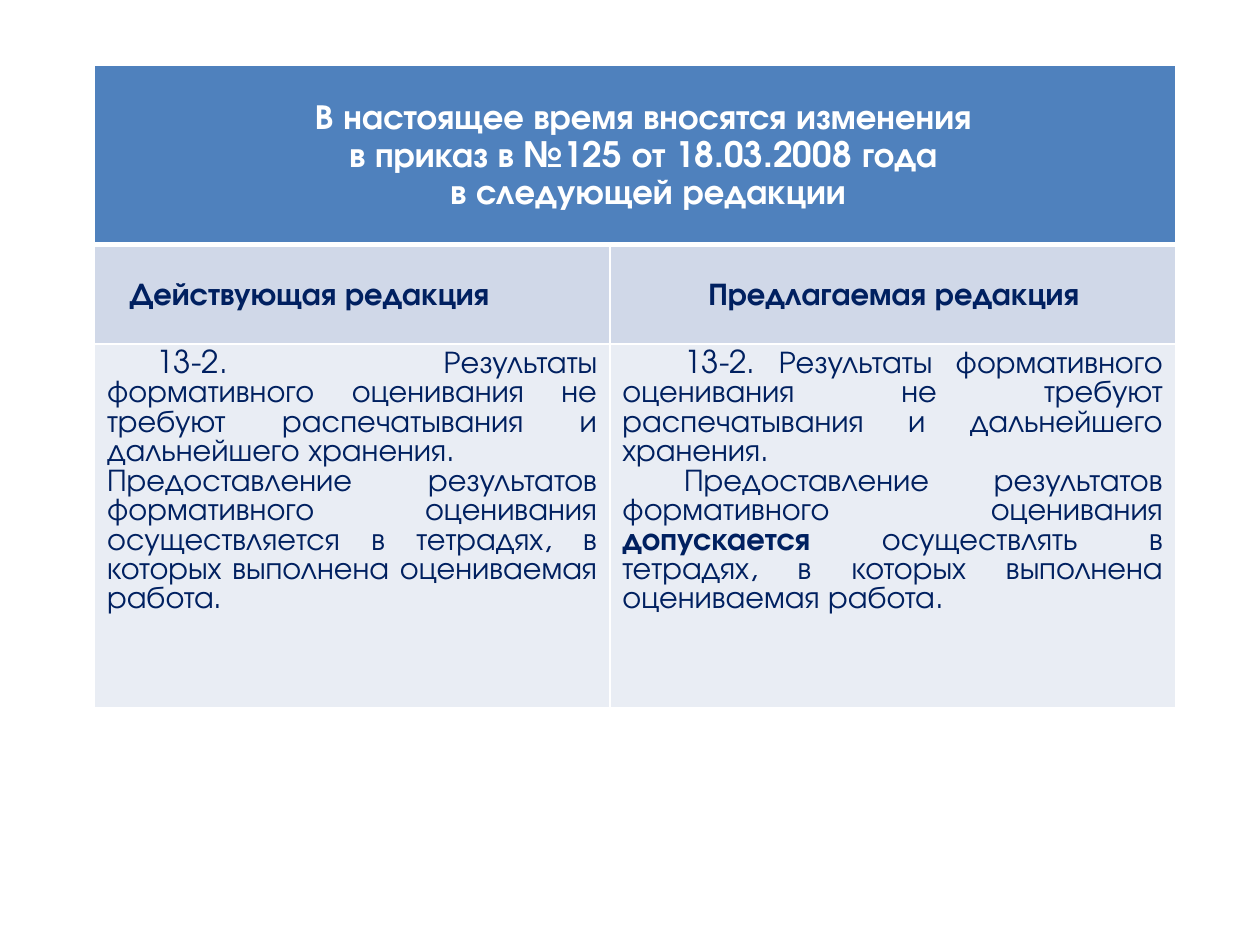
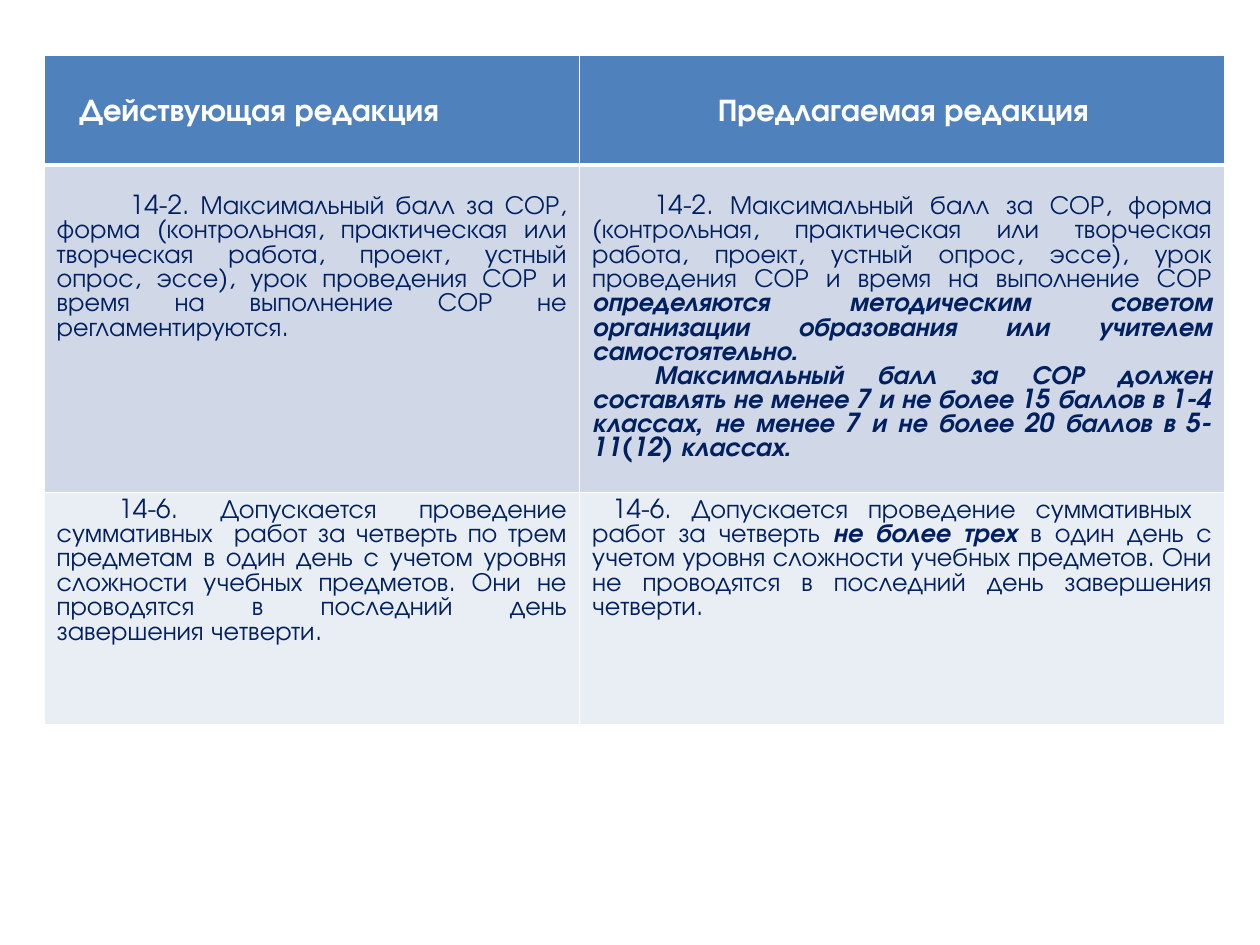
from dataclasses import dataclass

from lxml.etree import SubElement
from pptx import Presentation
from pptx.dml.color import RGBColor
from pptx.enum.text import MSO_ANCHOR, PP_ALIGN
from pptx.oxml.ns import qn
from pptx.util import Inches, Pt


@dataclass(frozen=True)
class Theme:
    font: str = "TeX Gyre Adventor"
    white: str = "FFFFFF"
    navy: str = "002060"
    header: str = "4F81BD"
    band_dark: str = "D0D8E8"
    band_light: str = "E9EDF4"
    title_size: int = 20
    heading_size: int = 18
    small_size: int = 15
    border: int = 1
    header_rule: int = 3


THEME = Theme()

# Run styles: (bold, italic)
PLAIN, BOLD, BOLD_ITALIC = (False, False), (True, False), (True, True)

CURRENT, PROPOSED = "Действующая редакция", "Предлагаемая редакция"
FIRST_LINE = 0.49
LINE_15PT = 0.19


def set_borders(cell, bottom):
    """Draw white cell borders; must run before the cell gets its fill."""
    properties = cell._tc.get_or_add_tcPr()
    widths = {"a:lnL": THEME.border, "a:lnR": THEME.border,
              "a:lnT": THEME.border, "a:lnB": bottom}
    for tag, width in widths.items():
        line = SubElement(properties, qn(tag), w=str(Pt(width)))
        fill = SubElement(line, qn("a:solidFill"))
        SubElement(fill, qn("a:srgbClr"), val=THEME.white)


def style_cell(cell, fill, bottom=THEME.border):
    set_borders(cell, bottom)
    cell.fill.solid()
    cell.fill.fore_color.rgb = RGBColor.from_string(fill)


def add_paragraph(cell, runs, size, color, align, indent=0, margin=0):
    """Fill the cell's empty first paragraph, or append one after its text."""
    frame = cell.text_frame
    paragraph = frame.paragraphs[0] if not frame.text else frame.add_paragraph()
    paragraph.alignment = align
    paragraph.font.size = Pt(size)
    properties = paragraph._p.get_or_add_pPr()
    properties.set("marL", str(Inches(margin)))
    properties.set("indent", str(Inches(indent)))
    for text, (bold, italic) in runs:
        run = paragraph.add_run()
        run.text = text
        run.font.name = THEME.font
        run.font.bold, run.font.italic = bold, italic
        run.font.color.rgb = RGBColor.from_string(color)
    return paragraph


def write_heading(cell, lines, size, color, align, indent, margin):
    cell.vertical_anchor = MSO_ANCHOR.MIDDLE
    cell.margin_left = cell.margin_right = Inches(0.07)
    cell.margin_top = cell.margin_bottom = 0
    for line in lines:
        paragraph = add_paragraph(cell, [(line, BOLD)], size, color, align,
                                  indent, margin)
        paragraph.line_spacing = 1.15


def write_column_headings(table, row, fill, color, bottom=THEME.border):
    current, proposed = table.cell(row, 0), table.cell(row, 1)
    for cell in (current, proposed):
        style_cell(cell, fill, bottom)
    write_heading(current, [CURRENT], THEME.heading_size, color,
                  PP_ALIGN.JUSTIFY, 0.2, 0.01)
    write_heading(proposed, [PROPOSED], THEME.heading_size, color,
                  PP_ALIGN.CENTER, 0, 0.02)


def write_clauses(table, row, fill, size, clauses, top=0.05):
    """Write one list of (indent, runs) paragraphs into each cell of a row."""
    for column, paragraphs in enumerate(clauses):
        cell = table.cell(row, column)
        style_cell(cell, fill)
        cell.margin_top = Inches(top)
        for indent, runs in paragraphs:
            add_paragraph(cell, runs, size, THEME.navy, PP_ALIGN.JUSTIFY, indent)


def add_comparison_table(presentation, left, top, widths, heights):
    slide = presentation.slides.add_slide(presentation.slide_layouts[6])
    table = slide.shapes.add_table(
        len(heights), len(widths), Inches(left), Inches(top),
        Inches(sum(widths)), Inches(sum(heights))).table
    table.first_row = table.horz_banding = False
    for column, width in zip(table.columns, widths):
        column.width = Inches(width)
    for row, height in zip(table.rows, heights):
        row.height = Inches(height)
    return table


def add_formative_slide(presentation):
    table = add_comparison_table(presentation, 0.75, 0.52,
                                 (4.09, 4.49), (1.42, 0.79, 2.89))
    for column in range(2):
        style_cell(table.cell(0, column), THEME.header, THEME.header_rule)
    title = table.cell(0, 0)
    title.merge(table.cell(0, 1))
    write_heading(title, ["В настоящее время вносятся изменения ",
                          "в приказ в №125 от 18.03.2008 года ",
                          "в следующей редакции"],
                  THEME.title_size, THEME.white, PP_ALIGN.CENTER, 0.2, 0.01)
    write_column_headings(table, 1, THEME.band_dark, THEME.navy)

    storage = [("13-2. Результаты формативного оценивания не требуют "
                "распечатывания и дальнейшего хранения.", PLAIN)]
    current = [
        (0.39, storage),
        (0, [("Предоставление результатов формативного оценивания "
              "осуществляется в тетрадях, в которых выполнена оцениваемая "
              "работа.", PLAIN)]),
    ]
    proposed = [
        (FIRST_LINE, storage),
        (FIRST_LINE, [
            ("Предоставление результатов формативного оценивания ", PLAIN),
            ("допускается ", BOLD),
            ("осуществлять в тетрадях, в которых выполнена оцениваемая "
             "работа.", PLAIN)]),
    ]
    write_clauses(table, 2, THEME.band_light, THEME.heading_size,
                  (current, proposed))


def add_summative_slide(presentation):
    table = add_comparison_table(presentation, 0.35, 0.44,
                                 (4.25, 5.12), (0.87, 2.6, 1.84))
    write_column_headings(table, 0, THEME.header, THEME.white,
                          THEME.header_rule)

    scoring = ("14-2. Максимальный балл за СОР, форма (контрольная, "
               "практическая или творческая работа, проект, устный опрос, "
               "эссе), урок проведения СОР и время на выполнение СОР ")
    current_scoring = [
        (FIRST_LINE, [(f" {scoring}не регламентируются.", PLAIN)])]
    proposed_scoring = [
        (FIRST_LINE, [
            (scoring, PLAIN),
            ("определяются методическим советом организации образования или "
             "учителем самостоятельно.", BOLD_ITALIC)]),
        (FIRST_LINE, [
            ("Максимальный балл за СОР должен составлять не менее 7 и не "
             "более 15 баллов в 1-4 классах, не менее 7 и не более 20 баллов "
             "в 5-11(12) классах.", BOLD_ITALIC)]),
    ]
    write_clauses(table, 1, THEME.band_dark, THEME.small_size,
                  (current_scoring, proposed_scoring), top=0.05 + LINE_15PT)

    schedule = "14-6. Допускается проведение суммативных  работ за четверть "
    conditions = ("в один день с учетом уровня сложности учебных предметов. "
                  "Они не проводятся в последний день завершения четверти.")
    current_schedule = [
        (FIRST_LINE, [(f"{schedule}по трем предметам {conditions}", PLAIN)])]
    proposed_schedule = [
        (0, [(f" {schedule}", PLAIN),
             ("не более трех ", BOLD_ITALIC),
             (conditions, PLAIN)])]
    write_clauses(table, 2, THEME.band_light, THEME.small_size,
                  (current_schedule, proposed_schedule))


def main():
    presentation = Presentation()
    presentation.slide_width = Inches(10)
    presentation.slide_height = Inches(7.5)
    add_formative_slide(presentation)
    add_summative_slide(presentation)
    presentation.save("out.pptx")


if __name__ == "__main__":
    main()
